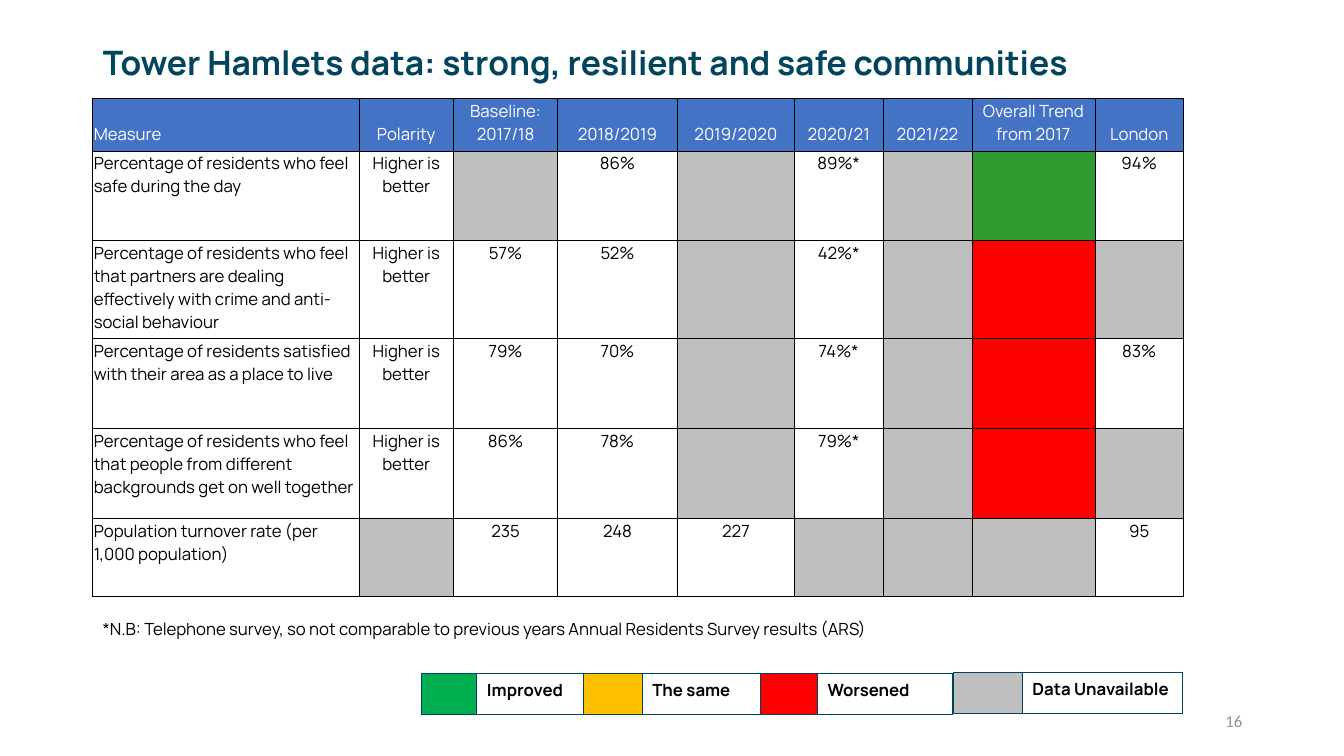
from lxml import etree
from pptx import Presentation
from pptx.dml.color import RGBColor
from pptx.enum import text as t
from pptx.oxml import ns
from pptx.util import Inches, Pt

HUE = {"navy": "00445E", "blue": "4472C4", "grey": "BFBFBF", "green": "319B31",
       "red": "FF0000", "lime": "00B050", "amber": "FFC000", "white": "FFFFFF",
       "black": "000000", "slate": "8C949D"}
LEFT, MID, RIGHT = t.PP_ALIGN.LEFT, t.PP_ALIGN.CENTER, t.PP_ALIGN.RIGHT


def write(frame, words, hue="black", size=12, bold=False, align=LEFT, face="Manrope"):
    for i, line in enumerate(words.split("\n")):
        para = frame.add_paragraph() if i else frame.paragraphs[0]
        para.alignment = align
        run = para.add_run()
        run.text = line
        font = run.font
        font.name, font.size, font.bold = face, Pt(size), bold
        font.color.rgb = RGBColor.from_string(HUE[hue])


def grid(left, top, widths, heights, edge, line):
    shape = slide.shapes.add_table(len(heights), len(widths), Inches(left), Inches(top),
                                   Inches(sum(widths)), Inches(sum(heights)))
    table = shape.table
    table.first_row = table.horz_banding = False
    for col, width in zip(table.columns, widths):
        col.width = Inches(width)
    for row, height in zip(table.rows, heights):
        row.height = Inches(height)
    for cell in table.iter_cells():
        props = cell._tc.get_or_add_tcPr()
        for side in ("a:lnL", "a:lnR", "a:lnT", "a:lnB"):
            border = etree.SubElement(props, ns.qn(side), w=str(Pt(line)))
            fill = etree.SubElement(border, ns.qn("a:solidFill"))
            etree.SubElement(fill, ns.qn("a:srgbClr"), val=HUE[edge])
        cell.fill.solid()
        cell.fill.fore_color.rgb = RGBColor.from_string(HUE["white"])
    return table


deck = Presentation()
deck.slide_width, deck.slide_height = Inches(13.33), Inches(7.5)
slide = deck.slides.add_slide(deck.slide_layouts[5])

title = slide.shapes.title
title.left, title.top = Inches(0.92), Inches(0.25)
title.width, title.height = Inches(11.5), Inches(0.79)
title.text_frame.vertical_anchor = t.MSO_ANCHOR.MIDDLE
write(title.text_frame, "Tower Hamlets data: strong, resilient and safe communities",
      "navy", 24, True)
title.text_frame.paragraphs[0].line_spacing = 0.9

high = "Higher is better"
data = [
    ["Measure", "Polarity", "Baseline:\n2017/18", "2018/2019", "2019/2020",
     "2020/21", "2021/22", "Overall Trend from 2017", "London"],
    ["Percentage of residents who feel safe during the day",
     high, "grey", "86%", "grey", "89%*", "grey", "green", "94%"],
    ["Percentage of residents who feel that partners are dealing effectively "
     "with crime and anti-social behaviour",
     high, "57%", "52%", "grey", "42%*", "grey", "red", "grey"],
    ["Percentage of residents satisfied with their area as a place to live",
     high, "79%", "70%", "grey", "74%*", "grey", "red", "83%"],
    ["Percentage of residents who feel that people from different backgrounds "
     "get on well together",
     high, "86%", "78%", "grey", "79%*", "grey", "red", "grey"],
    ["Population turnover rate (per 1,000 population)",
     "grey", "235", "248", "227", "grey", "grey", "grey", "95"],
]
table = grid(0.92, 0.98, [2.64, 0.94, 1.03, 1.19, 1.16, 0.88, 0.88, 1.22, 0.88],
             [0.45] + [0.89] * 4 + [0.78], "black", 0.5)
for r, row in enumerate(data):
    for c, item in enumerate(row):
        cell = table.cell(r, c)
        cell.margin_left = cell.margin_right = cell.margin_top = Inches(0.01)
        cell.margin_bottom = Inches(0.05)
        if r == 0:
            cell.vertical_anchor = t.MSO_ANCHOR.BOTTOM
            cell.fill.fore_color.rgb = RGBColor.from_string(HUE["blue"])
        if item in HUE:
            cell.fill.fore_color.rgb = RGBColor.from_string(HUE[item])
        else:
            write(cell.text_frame, item, "black" if r else "white",
                  align=MID if c else LEFT)

keys = [
    (4.18, 6.68, [0.55, 1.06, 0.58, 1.17, 0.57, 1.34],
     ["lime", "Improved", "amber", "The same", "red", "Worsened"]),
    (9.46, 6.67, [0.68, 1.59], ["grey", "Data Unavailable"]),
]
for left, top, widths, items in keys:
    key = grid(left, top, widths, [0.4], "navy", 1)
    for cell, item in zip(key.iter_cells(), items):
        if item in HUE:
            cell.fill.fore_color.rgb = RGBColor.from_string(HUE[item])
        else:
            write(cell.text_frame, item, bold=True)

note = slide.shapes.add_textbox(Inches(0.92), Inches(6.09), Inches(8.23), Inches(0.3))
note.text_frame.word_wrap = True
write(note.text_frame, "*N.B: Telephone survey, so not comparable to previous years "
      "Annual Residents Survey results (ARS)")

page = slide.shapes.add_textbox(Inches(9.42), Inches(6.95), Inches(3), Inches(0.4))
page.text_frame.word_wrap = True
page.text_frame.vertical_anchor = t.MSO_ANCHOR.MIDDLE
write(page.text_frame, "16", "slate", align=RIGHT, face="Calibri")

deck.save("out.pptx")
